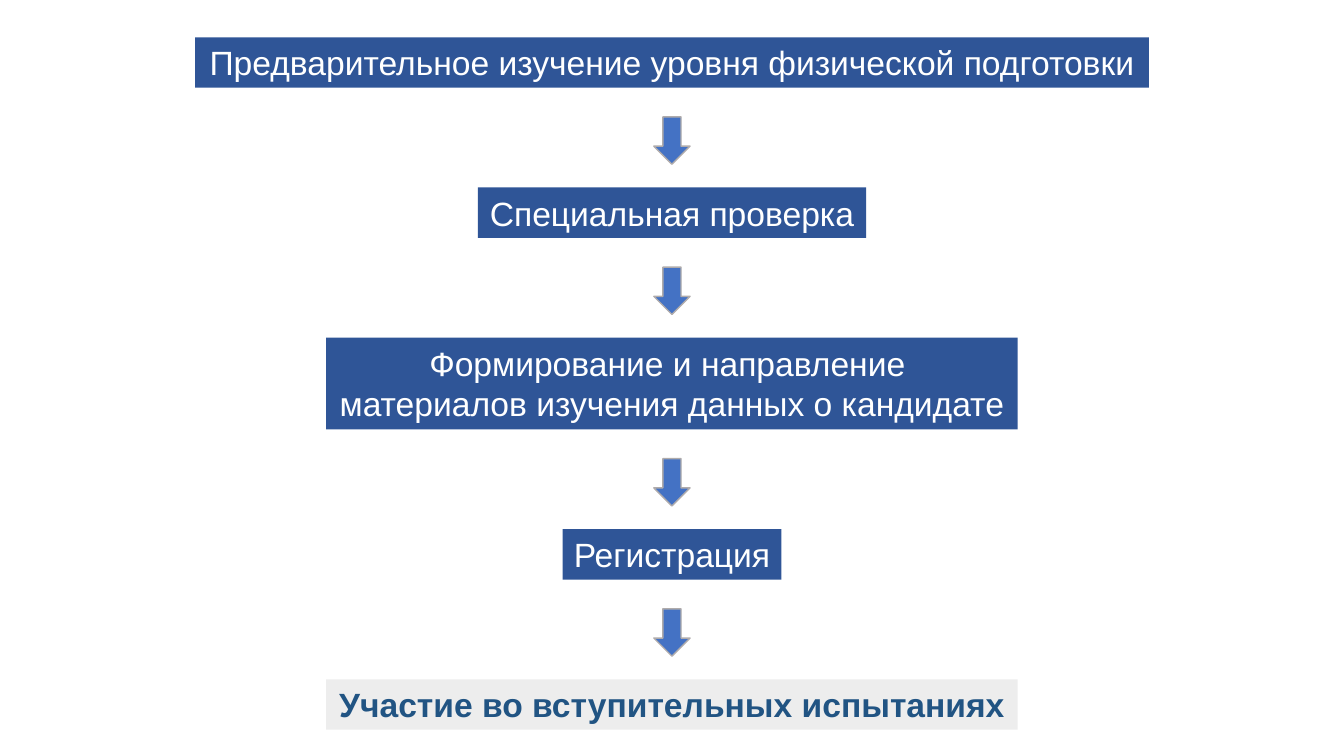
from dataclasses import dataclass

from pptx import Presentation
from pptx.dml.color import RGBColor
from pptx.enum.shapes import MSO_SHAPE
from pptx.enum.text import MSO_ANCHOR, MSO_AUTO_SIZE, PP_ALIGN
from pptx.util import Inches, Pt


@dataclass(frozen=True)
class Theme:
    """Colours, font and sizes of the slide."""
    font: str = "Arial"
    size: int = 24
    step_fill: str = "2F5597"
    step_text: str = "FFFFFF"
    final_fill: str = "EDEDED"
    final_text: str = "215483"
    arrow_fill: str = "4472C4"
    arrow_line: str = "AFABAB"
    line_width: int = 1


THEME = Theme()
SLIDE_W, SLIDE_H = 13.33, 7.5
FIRST_TOP = 0.37
ARROW_W, ARROW_H = 0.36, 0.47
GAP_ABOVE_ARROW, GAP_BELOW_ARROW = 0.29, 0.23

STEPS = [
    ("Предварительное изучение уровня физической подготовки", 9.46, 0.5),
    ("Специальная проверка", 3.85, 0.5),
    ("Формирование и направление \nматериалов изучения данных о кандидате", 6.86, 0.91),
    ("Регистрация", 2.17, 0.5),
]
FINAL_STEP = ("Участие во вступительных испытаниях", 6.86, 0.5)


def add_centred(s, kind, top, width, height, fill):
    """Add a filled shape centred across the slide."""
    sp = s.shapes.add_shape(kind, Inches((SLIDE_W - width) / 2), Inches(top),
                            Inches(width), Inches(height))
    sp.shadow.inherit = False
    sp.fill.solid()
    sp.fill.fore_color.rgb = RGBColor.from_string(fill)
    return sp


def set_text(sp, text, *, color, size=THEME.size, bold=False):
    """Write centred text, one paragraph per line."""
    tf = sp.text_frame
    tf.word_wrap = True
    tf.auto_size = MSO_AUTO_SIZE.SHAPE_TO_FIT_TEXT
    tf.vertical_anchor = MSO_ANCHOR.TOP
    tf.text = text
    for p in tf.paragraphs:
        p.alignment = PP_ALIGN.CENTER
        for r in p.runs:
            r.font.name = THEME.font
            r.font.size = Pt(size)
            r.font.bold = bold
            r.font.color.rgb = RGBColor.from_string(color)


def add_box(s, step, top, *, fill=THEME.step_fill, color=THEME.step_text, bold=False):
    """Add a step box and return its bottom edge in inches."""
    text, width, height = step
    sp = add_centred(s, MSO_SHAPE.RECTANGLE, top, width, height, fill)
    sp.line.fill.background()
    set_text(sp, text, color=color, bold=bold)
    return top + height


def add_arrow(s, top):
    """Add a down arrow and return its bottom edge in inches."""
    sp = add_centred(s, MSO_SHAPE.DOWN_ARROW, top, ARROW_W, ARROW_H, THEME.arrow_fill)
    sp.line.color.rgb = RGBColor.from_string(THEME.arrow_line)
    sp.line.width = Pt(THEME.line_width)
    return top + ARROW_H


def main():
    """Build the admission steps slide."""
    prs = Presentation()
    prs.slide_width, prs.slide_height = Inches(SLIDE_W), Inches(SLIDE_H)
    s = prs.slides.add_slide(prs.slide_layouts[6])
    top = FIRST_TOP
    for step in STEPS:
        bottom = add_box(s, step, top)
        top = add_arrow(s, bottom + GAP_ABOVE_ARROW) + GAP_BELOW_ARROW
    add_box(s, FINAL_STEP, top, fill=THEME.final_fill, color=THEME.final_text, bold=True)
    prs.save("out.pptx")


if __name__ == "__main__":
    main()
